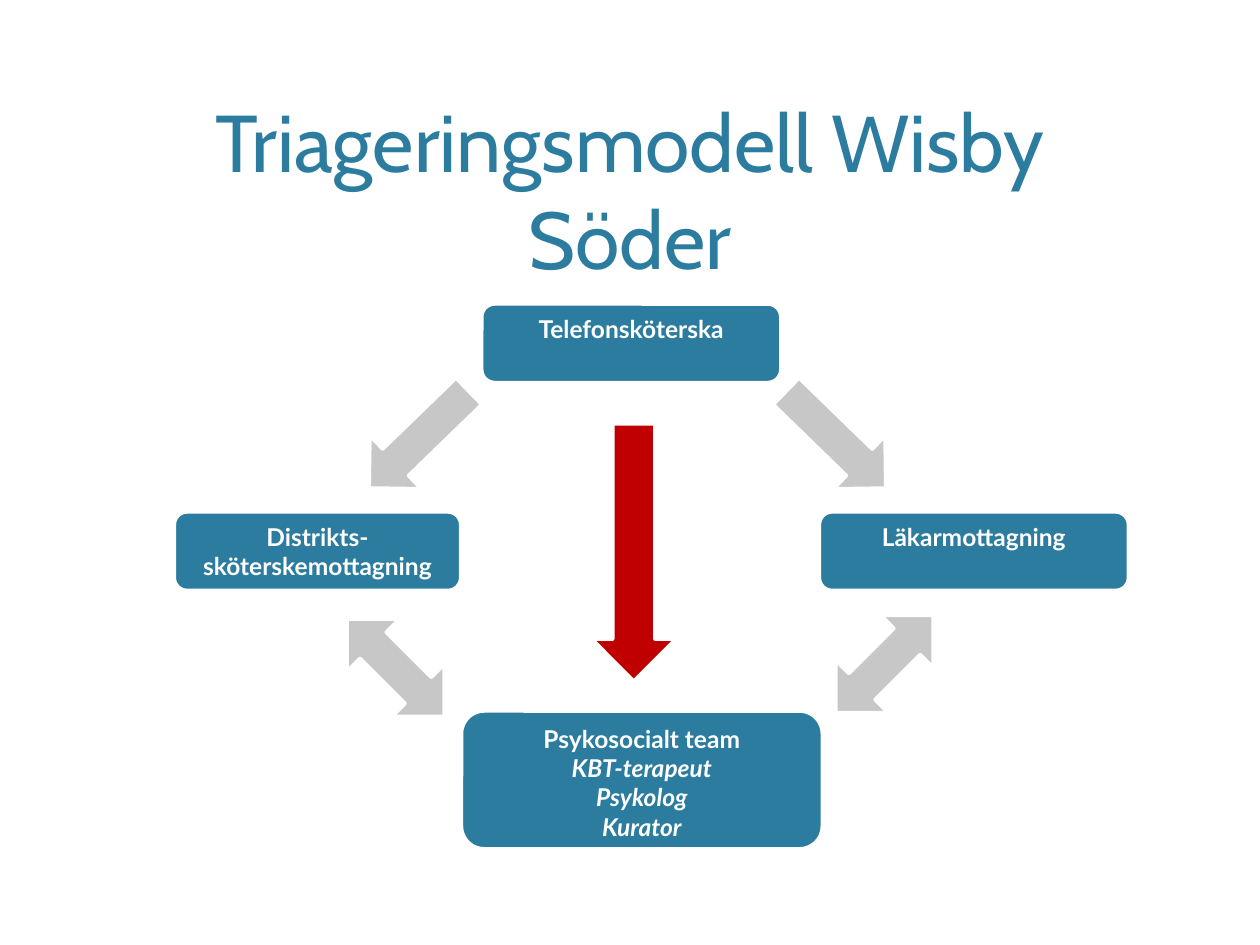
from lxml import etree
from pptx import Presentation
from pptx.dml.color import RGBColor
from pptx.enum.shapes import MSO_SHAPE
from pptx.enum.text import MSO_ANCHOR, PP_ALIGN
from pptx.oxml.ns import qn
from pptx.util import Inches, Pt

BOX, LEFT, RIGHT = MSO_SHAPE.ROUNDED_RECTANGLE, MSO_SHAPE.LEFT_ARROW, MSO_SHAPE.RIGHT_ARROW
DOWN, UP_DOWN = MSO_SHAPE.DOWN_ARROW, MSO_SHAPE.UP_DOWN_ARROW
TOP, CENTER = MSO_ANCHOR.TOP, PP_ALIGN.CENTER

COLORS = {"blue": "2C7C9F", "white": "FFFFFF", "black": "000000", "red": "C00000"}
TITLE = "Triageringsmodell Wisby Söder"

# Care units: left, top, width, height, bold lines, bold italic lines
UNITS = [
    (3.82, 2.41, 2.38, 0.63, ["Telefonsköterska"], []),
    (1.38, 4.06, 2.28, 0.63, ["Distrikts-sköterskemottagning"], []),
    (6.5, 4.06, 2.46, 0.63, ["Läkarmottagning"], []),
    (3.66, 5.64, 2.87, 1.1, ["Psykosocialt team"], ["KBT-terapeut", "Psykolog", "Kurator"]),
]

# Patient flows: shape, left, top, width, height, rotation, colour, opacity in %
FLOWS = [
    (LEFT, 2.77, 3.19, 1.11, 0.6, 315.9, "black", 22),
    (RIGHT, 6.08, 3.19, 1.11, 0.6, 44.2, "black", 22),
    (UP_DOWN, 2.84, 4.75, 0.6, 1.1, 315, "black", 22),
    (UP_DOWN, 6.72, 4.72, 0.6, 1.1, 45, "black", 22),
    (DOWN, 4.69, 3.36, 0.68, 2.05, 0, "red", 100),
]


def rgb(name):
    return RGBColor.from_string(COLORS[name])


def add_text(p, text, size=14, font="Lato", color="white", bold=False, italic=False):
    p.alignment = CENTER
    r = p.add_run()
    r.text = text
    r.font.size, r.font.name = Pt(size), font
    r.font.bold, r.font.italic = bold, italic
    r.font.color.rgb = rgb(color)


def add_shape(s, kind, box, color, opacity=100, rotation=0):
    sp = s.shapes.add_shape(kind, *map(Inches, box))
    sp.rotation = rotation
    sp.shadow.inherit = False
    sp.fill.solid()
    sp.fill.fore_color.rgb = rgb(color)
    if opacity < 100:
        clr = sp.fill._xPr.find(qn("a:solidFill"))[0]
        etree.SubElement(clr, qn("a:alpha")).set("val", str(opacity * 1000))
    sp.line.color.rgb = rgb("white")
    sp.line.width = Pt(2.5)
    return sp


prs = Presentation()
prs.slide_width, prs.slide_height = Inches(10), Inches(7.5)
s = prs.slides.add_slide(prs.slide_layouts[5])

# Title
title = s.shapes.title
title.left, title.top, title.width, title.height = map(Inches, (0.75, 0.68, 8.5, 1.25))
title.text_frame.word_wrap = True
title.text_frame.vertical_anchor = TOP
add_text(title.text_frame.paragraphs[0], TITLE, size=46, font="Cabin", color="blue")

# Care units
for *box, names, roles in UNITS:
    tf = add_shape(s, BOX, box, "blue").text_frame
    tf.word_wrap = True
    tf.vertical_anchor = TOP
    p = tf.paragraphs[0]
    for i, line in enumerate(names + roles):
        if i:
            p.add_line_break()
        add_text(p, line, bold=True, italic=line in roles)

# Flow arrows
for kind, *box, rotation, color, opacity in FLOWS:
    add_shape(s, kind, box, color, opacity, rotation)

prs.save("out.pptx")
